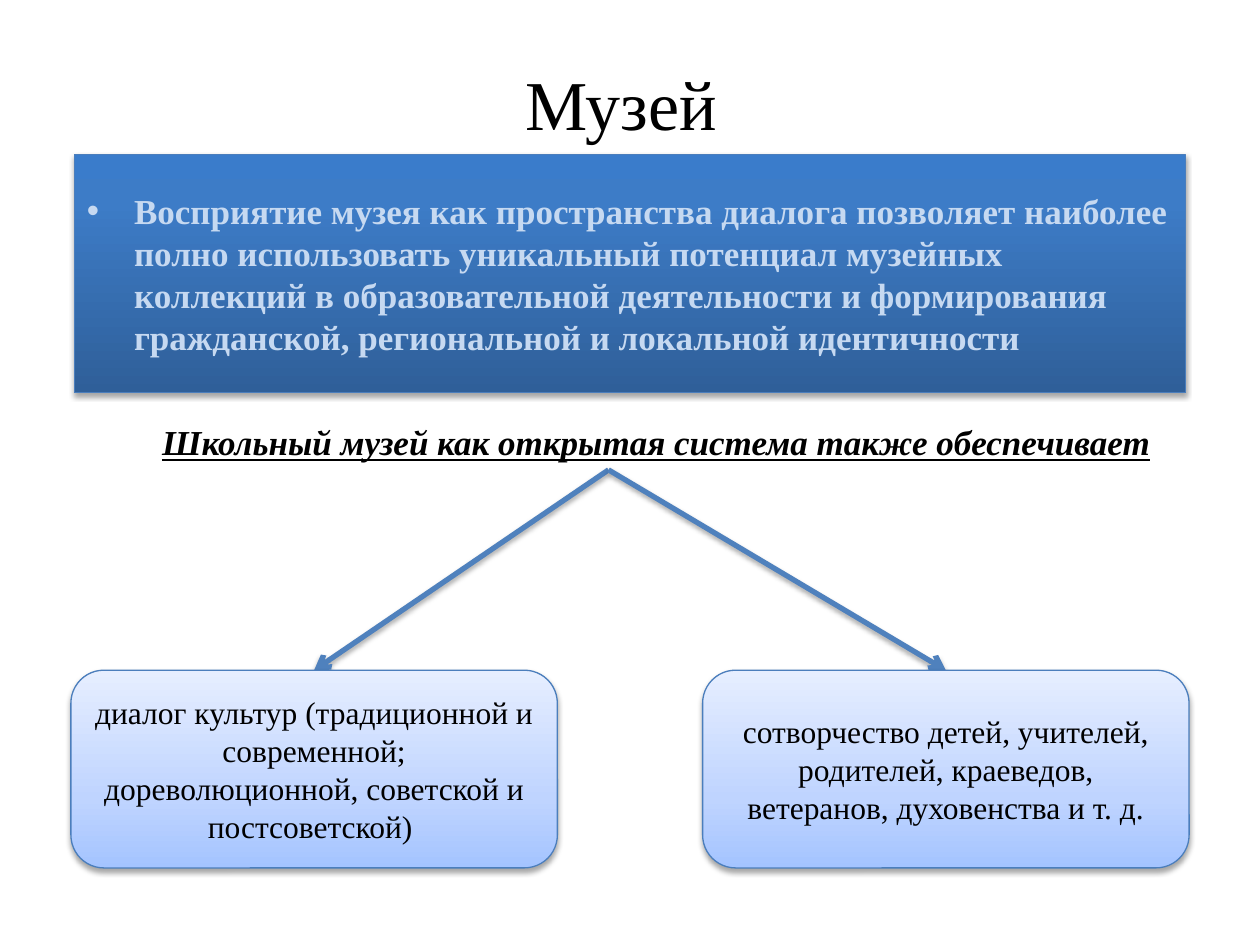
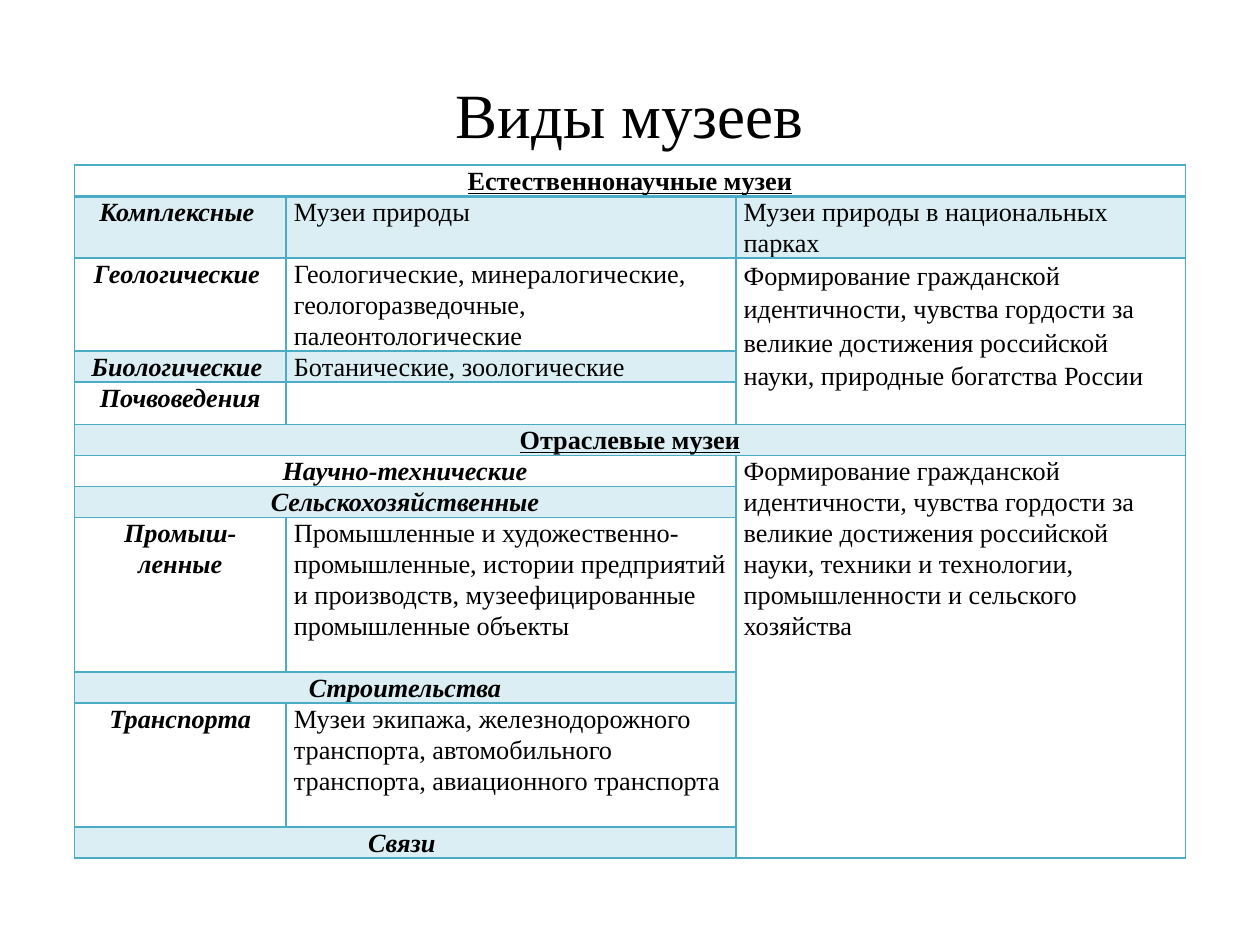
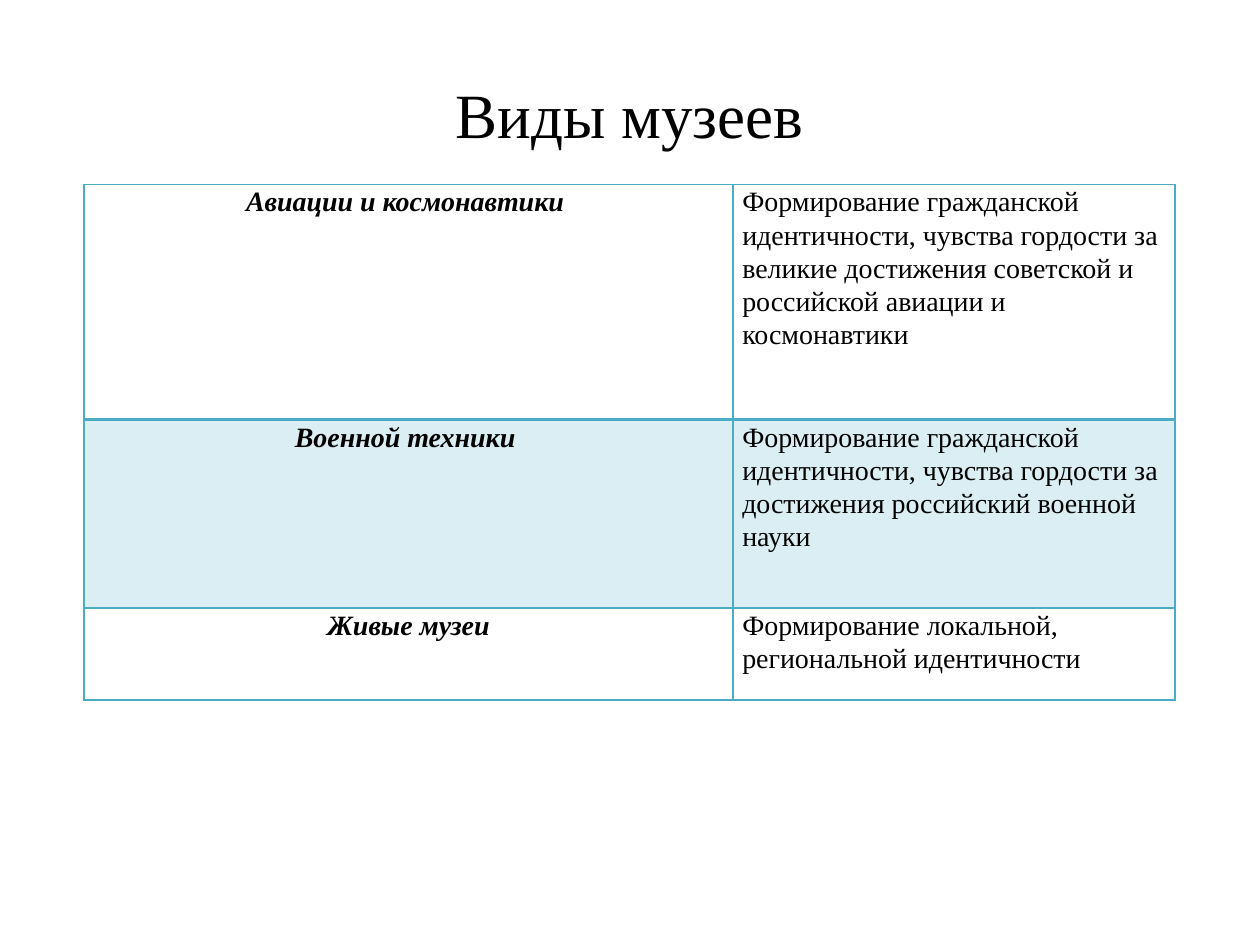
from dataclasses import dataclass

from lxml import etree
from pptx import Presentation
from pptx.dml.color import RGBColor
from pptx.enum import shapes, text
from pptx.oxml.ns import qn
from pptx.util import Pt


@dataclass(frozen=True)
class Theme:
    font: str = "Times New Roman"
    ink: str = "000000"
    pale_ink: str = "C6D9F1"
    outline: str = "4B7EBC"
    arrow: str = "4F81BD"
    grid: str = "4BACC6"
    band: str = "DBEEF4"
    deep_gradient: tuple = ((0, "2F5F99"), (80, "3D7CC7"), (100, "3A7CCB"))
    light_gradient: tuple = ((0, "A4C4FF"), (35, "BFD4FF"), (100, "E6EEFF"))
    large_title: float = 40
    title: float = 36
    lead: float = 20
    body: float = 18
    wide_table: float = 16
    dense_table: float = 15


THEME = Theme()
CENTER, LEFT, RIGHT = text.PP_ALIGN.CENTER, text.PP_ALIGN.LEFT, text.PP_ALIGN.RIGHT
TOP, MIDDLE = text.MSO_ANCHOR.TOP, text.MSO_ANCHOR.MIDDLE


def add_xml(parent, tag, **attributes):
    values = {name: str(value) for name, value in attributes.items()}
    return etree.SubElement(parent, qn(tag), values)


def points(box):
    return [Pt(length) for length in box]


def write(frame, content, size=THEME.body, color=THEME.ink, align=LEFT, anchor=TOP,
          bold=False, italic=False, underline=False, spacing=None, bullet_indent=0):
    frame.word_wrap = True
    frame.vertical_anchor = anchor
    paragraph = frame.paragraphs[0]
    paragraph.alignment = align
    paragraph.line_spacing = spacing
    if bullet_indent:
        properties = paragraph._p.get_or_add_pPr()
        properties.set("marL", str(Pt(bullet_indent)))
        properties.set("indent", str(-Pt(bullet_indent)))
        add_xml(properties, "a:buFont", typeface="Arial")
        add_xml(properties, "a:buChar", char="•")
    if content:
        run = paragraph.add_run()
        run.text = content
        font = run.font
        font.name, font.size = THEME.font, Pt(size)
        font.bold, font.italic, font.underline = bold, italic, underline
        font.color.rgb = RGBColor.from_string(color)


def add_titled_slide(presentation, title, top, size):
    slide = presentation.slides.add_slide(presentation.slide_layouts[5])
    shape = slide.shapes.title
    shape.left, shape.top, shape.width, shape.height = points((31, top, 657.5, 78.5))
    write(shape.text_frame, title, size=size, align=CENTER)
    return slide


def draw_line(line, color, width):
    line.color.rgb = RGBColor.from_string(color)
    line.width = Pt(width)


def add_shadow(shape, opacity=35):
    """Add a soft shadow below; call it after the line is set."""
    effects = add_xml(shape._element.spPr, "a:effectLst")
    shadow = add_xml(effects, "a:outerShdw", blurRad=Pt(3.1), dist=Pt(1.8),
                     dir=90 * 60000, rotWithShape=0)
    color = add_xml(shadow, "a:srgbClr", val="000000")
    add_xml(color, "a:alpha", val=opacity * 1000)


def add_panel(slide, kind, box, gradient, content, **text_format):
    """Add a shape with a gradient that runs from bottom to top."""
    panel = slide.shapes.add_shape(kind, *points(box))
    panel.fill.gradient()
    panel.fill.gradient_angle = 90
    stops = panel._element.spPr.find(f"{qn('a:gradFill')}/{qn('a:gsLst')}")
    stops.clear()
    for position, color in gradient:
        add_xml(add_xml(stops, "a:gs", pos=position * 1000), "a:srgbClr", val=color)
    draw_line(panel.line, THEME.outline, 0.75)
    add_shadow(panel)
    write(panel.text_frame, content, anchor=MIDDLE, **text_format)
    return panel


def add_arrow(slide, source):
    """Start an arrow at the bottom of source; its end is joined later."""
    arrow = slide.shapes.add_connector(shapes.MSO_CONNECTOR.STRAIGHT, 0, 0, 0, 0)
    arrow.begin_connect(source, 2)
    draw_line(arrow.line, THEME.arrow, 3)
    add_xml(arrow._element.spPr.find(qn("a:ln")), "a:tailEnd", type="arrow")
    add_shadow(arrow)
    return arrow


def add_branches(slide, box, branches):
    """Fill box with a heading and arrows to equal panels along the bottom."""
    left, top, width, height = box
    panel_width, panel_height = 278, 113
    heading = slide.shapes.add_textbox(*points((left - 9.5, top, 633.5, 31.5)))
    write(heading.text_frame, "Школьный музей как открытая система также обеспечивает",
          size=THEME.lead, align=RIGHT, bold=True, italic=True, underline=True)
    arrows = [add_arrow(slide, heading) for _ in branches]
    step = (width - panel_width) / (len(branches) - 1)
    for index, (arrow, content) in enumerate(zip(arrows, branches)):
        panel = add_panel(
            slide, shapes.MSO_SHAPE.FLOWCHART_ALTERNATE_PROCESS,
            (left + index * step, top + height - panel_height, panel_width, panel_height),
            THEME.light_gradient, content, align=CENTER)
        arrow.end_connect(panel, 0)


def set_borders(cell, bottom, top):
    properties = cell._tc.get_or_add_tcPr()
    for tag, width in (("a:lnL", 1), ("a:lnR", 1), ("a:lnT", top), ("a:lnB", bottom)):
        line = add_xml(properties, tag, w=Pt(width))
        add_xml(add_xml(line, "a:solidFill"), "a:srgbClr", val=THEME.grid)


def add_museum_table(slide, origin, widths, heights, rows, size, inset,
                     spans=(), section_rows=(), loose_cells=()):
    """Build a banded table; spans holds (row, column, last row, last column)."""
    box = (*origin, sum(widths), sum(heights))
    table = slide.shapes.add_table(len(rows), len(widths), *points(box)).table
    table.first_row = table.horz_banding = False
    for column, width in zip(table.columns, widths):
        column.width = Pt(width)
    for row, height in zip(table.rows, heights):
        row.height = Pt(height)
    for first_row, first_column, last_row, last_column in spans:
        table.cell(first_row, first_column).merge(table.cell(last_row, last_column))

    for r, contents in enumerate(rows):
        for c, content in enumerate(contents):
            cell = table.cell(r, c)
            cell.margin_left = cell.margin_right = Pt(inset)
            cell.margin_top = cell.margin_bottom = 0
            set_borders(cell, bottom=2 if r == 0 else 1, top=2 if r == 1 else 1)
            if r % 2 and not cell.is_spanned:
                cell.fill.solid()
                cell.fill.fore_color.rgb = RGBColor.from_string(THEME.band)
            else:
                cell.fill.background()
            is_label, is_section = c == 0, r in section_rows
            write(cell.text_frame, content, size=size, align=CENTER if is_label else LEFT,
                  bold=is_label, italic=is_label and not is_section, underline=is_section,
                  spacing=1.15 if (r, c) in loose_cells else 1.07)


def build_museum_slide(presentation):
    slide = add_titled_slide(presentation, "Музей ", 31, THEME.large_title)
    add_panel(
        slide, shapes.MSO_SHAPE.RECTANGLE, (42.5, 88.5, 635, 136), THEME.deep_gradient,
        "Восприятие музея как пространства диалога позволяет наиболее полно использовать "
        "уникальный потенциал музейных коллекций в образовательной деятельности и "
        "формирования гражданской, региональной и локальной идентичности",
        size=THEME.lead, color=THEME.pale_ink, bold=True, bullet_indent=27)
    add_branches(slide, (40.5, 237, 639, 259), (
        "диалог культур (традиционной и современной; дореволюционной, советской и "
        "постсоветской) ",
        "сотворчество детей, учителей, родителей, краеведов, ветеранов, духовенства "
        "и\u00a0т.\u00a0д."))


def build_science_slide(presentation):
    slide = add_titled_slide(presentation, "Виды музеев", 39.5, THEME.title)
    line_height = 17.7
    line_counts = (1, 2, 3, 1, 1.37, 1, 1, 1, 5, 1, 4, 1)
    rows = (
        ("Естественнонаучные музеи", "", ""),
        ("Комплексные ", "Музеи природы", "Музеи природы в национальных парках"),
        ("Геологические ",
         "Геологические, минералогические, геологоразведочные, палеонтологические",
         "Формирование гражданской идентичности, чувства гордости за великие достижения "
         "российской науки, природные богатства России"),
        ("Биологические ", "Ботанические, зоологические", ""),
        ("Почвоведения", "", ""),
        ("Отраслевые музеи", "", ""),
        ("Научно-технические", "",
         "Формирование гражданской идентичности, чувства гордости за великие достижения "
         "российской науки, техники и технологии, промышленности и сельского хозяйства"),
        ("Сельскохозяйственные", "", ""),
        ("Промыш-ленные",
         "Промышленные и художественно-промышленные, истории предприятий и производств, "
         "музеефицированные промышленные объекты", ""),
        ("Строительства", "", ""),
        ("Транспорта",
         "Музеи экипажа, железнодорожного транспорта, автомобильного транспорта, "
         "авиационного транспорта", ""),
        ("Связи ", "", ""),
    )
    section_rows = (0, 5)
    spans = [(row, 0, row, 2) for row in section_rows]
    spans += [(row, 0, row, 1) for row in (6, 7, 9, 11)]
    spans += [(2, 2, 4, 2), (6, 2, 11, 2)]
    add_museum_table(slide, (42.5, 94.3), (121, 257, 257),
                     [count * line_height for count in line_counts], rows,
                     THEME.dense_table, 4.5, spans, section_rows, loose_cells=((2, 2),))


def build_technology_slide(presentation):
    slide = add_titled_slide(presentation, "Виды музеев", 39.5, THEME.title)
    rows = (
        ("Авиации и космонавтики ",
         "Формирование гражданской идентичности, чувства гордости за великие достижения "
         "советской и российской авиации и космонавтики"),
        ("Военной техники ",
         "Формирование гражданской идентичности, чувства гордости за достижения "
         "российский военной науки"),
        ("Живые музеи", "Формирование локальной, региональной идентичности"),
    )
    add_museum_table(slide, (48, 105.5), (371, 252.5), (134.5, 107.5, 52.5), rows,
                     THEME.wide_table, 5.2)


def main():
    presentation = Presentation()
    presentation.slide_width, presentation.slide_height = Pt(720), Pt(540)
    build_museum_slide(presentation)
    build_science_slide(presentation)
    build_technology_slide(presentation)
    presentation.save("out.pptx")


if __name__ == "__main__":
    main()
